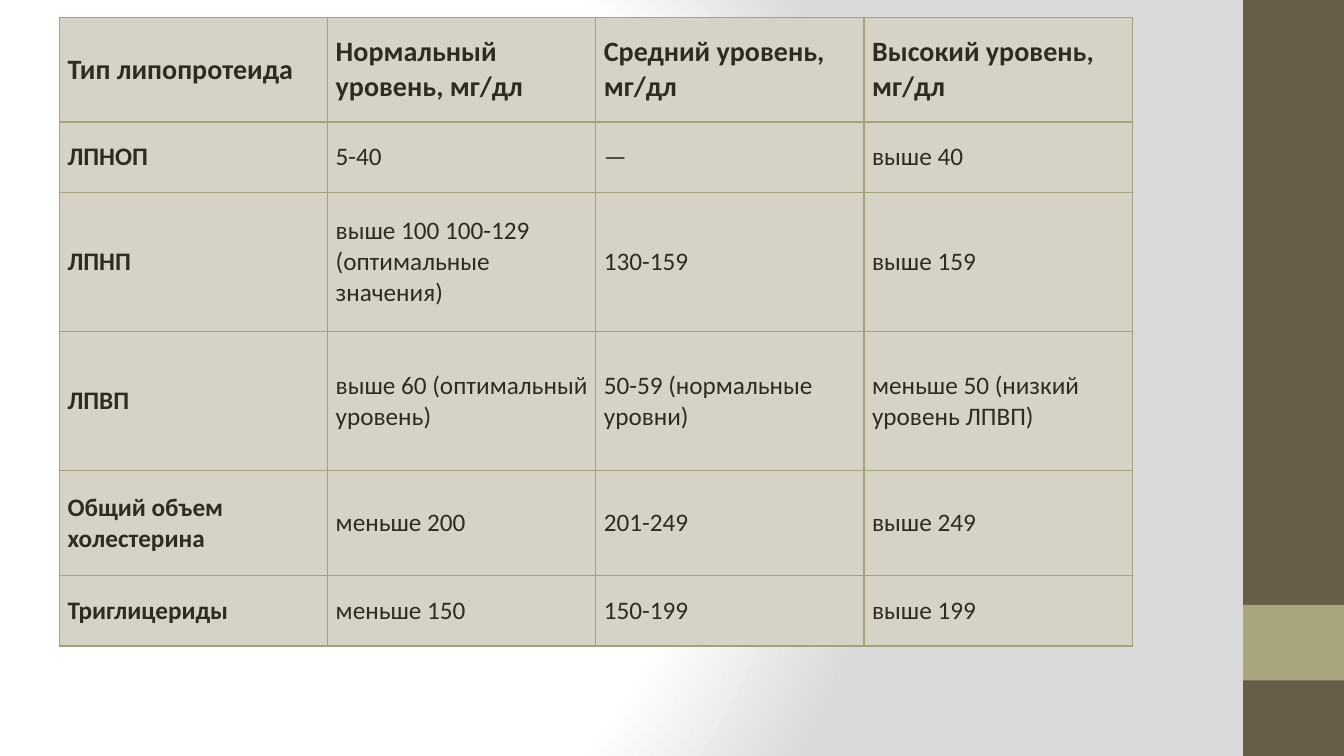
from pptx import Presentation
from pptx import util as u
from pptx.dml import color
from pptx.enum import shapes, text
from pptx.oxml import parse_xml
from pptx.oxml.ns import nsdecls


def rgb(value):
    return color.RGBColor.from_string(value)


class LipidSlide:
    FONT = "Calibri"
    INK = "2F2B20"
    CELL = "D6D3C6"
    BORDER = "A6A278"

    def __init__(self, prs):
        self.s = prs.slides.add_slide(prs.slide_layouts[6])

    def background(self, stops, focus):
        self.s.background.fill.solid()
        bg = self.s.element.xpath(".//p:bgPr")[0]
        gs = "".join(f'<a:gs pos="{pos * 1000}"><a:srgbClr val="{value}"/></a:gs>'
                     for pos, value in stops)
        rect = " ".join(f'{side}="{inset * 1000}"' for side, inset in zip("ltrb", focus))
        bg.replace(bg[0], parse_xml(
            f'<a:gradFill {nsdecls("a")} rotWithShape="1"><a:gsLst>{gs}</a:gsLst>'
            f'<a:path path="circle"><a:fillToRect {rect}/></a:path></a:gradFill>'))

    def band(self, x, y, w, h, fill):
        sp = self.s.shapes.add_shape(shapes.MSO_SHAPE.RECTANGLE, u.Inches(x),
                                     u.Inches(y), u.Inches(w), u.Inches(h))
        sp.shadow.inherit = False
        sp.fill.solid()
        sp.fill.fore_color.rgb = rgb(fill)
        sp.line.fill.background()

    def borders(self, cell):
        tc_pr = cell._tc.get_or_add_tcPr()
        for i, side in enumerate("LRTB"):
            tc_pr.insert(i, parse_xml(
                f'<a:ln{side} {nsdecls("a")} w="{u.Pt(1)}"><a:solidFill>'
                f'<a:srgbClr val="{self.BORDER}"/></a:solidFill></a:ln{side}>'))

    def cell(self, cell, content, size, bold):
        cell.fill.solid()
        cell.fill.fore_color.rgb = rgb(self.CELL)
        self.borders(cell)
        cell.margin_left = cell.margin_right = u.Inches(0.08)
        cell.margin_top = cell.margin_bottom = u.Inches(0.16)
        cell.vertical_anchor = text.MSO_ANCHOR.MIDDLE
        cell.text = content
        font = cell.text_frame.paragraphs[0].font
        font.name, font.size, font.bold = self.FONT, u.Pt(size), bold
        font.color.rgb = rgb(self.INK)

    def table(self, x, y, col_width, row_heights, rows):
        cols = len(rows[0])
        table = self.s.shapes.add_table(
            len(rows), cols, u.Inches(x), u.Inches(y),
            u.Inches(col_width * cols), u.Inches(sum(row_heights))).table
        for column in table.columns:
            column.width = u.Inches(col_width)
        for i, (height, row) in enumerate(zip(row_heights, rows)):
            table.rows[i].height = u.Inches(height)
            for j, content in enumerate(row):
                self.cell(table.cell(i, j), content, 18 if i else 20, i == 0 or j == 0)


LEVELS = [
    ["Тип липопротеида", "Нормальный уровень, мг/дл", "Средний уровень, мг/дл",
     "Высокий уровень, мг/дл"],
    ["ЛПНОП", "5-40", "—", "выше 40"],
    ["ЛПНП", "выше 100 100-129 (оптимальные значения)", "130-159", "выше 159"],
    ["ЛПВП", "выше 60 (оптимальный уровень)", "50-59 (нормальные уровни)",
     "меньше 50 (низкий уровень ЛПВП)"],
    ["Общий объем холестерина", "меньше 200", "201-249", "выше 249"],
    ["Триглицериды", "меньше 150", "150-199", "выше 199"],
]


def main():
    prs = Presentation()
    prs.slide_width, prs.slide_height = u.Inches(13.33), u.Inches(7.5)
    slide = LipidSlide(prs)

    # Backdrop and side bands
    slide.background([(0, "FFFFFF"), (75, "FFFFFF"), (100, "DADADA")], (20, 50, 100, 50))
    slide.band(12.33, 0, 1, 7.5, "675E47")
    slide.band(12.33, 6, 1, 0.75, "A9A57C")

    # Lipoprotein levels
    slide.table(0.59, 0.17, 2.66, [1.04, 0.7, 1.38, 1.38, 1.04, 0.7], LEVELS)

    prs.save("out.pptx")


if __name__ == "__main__":
    main()
